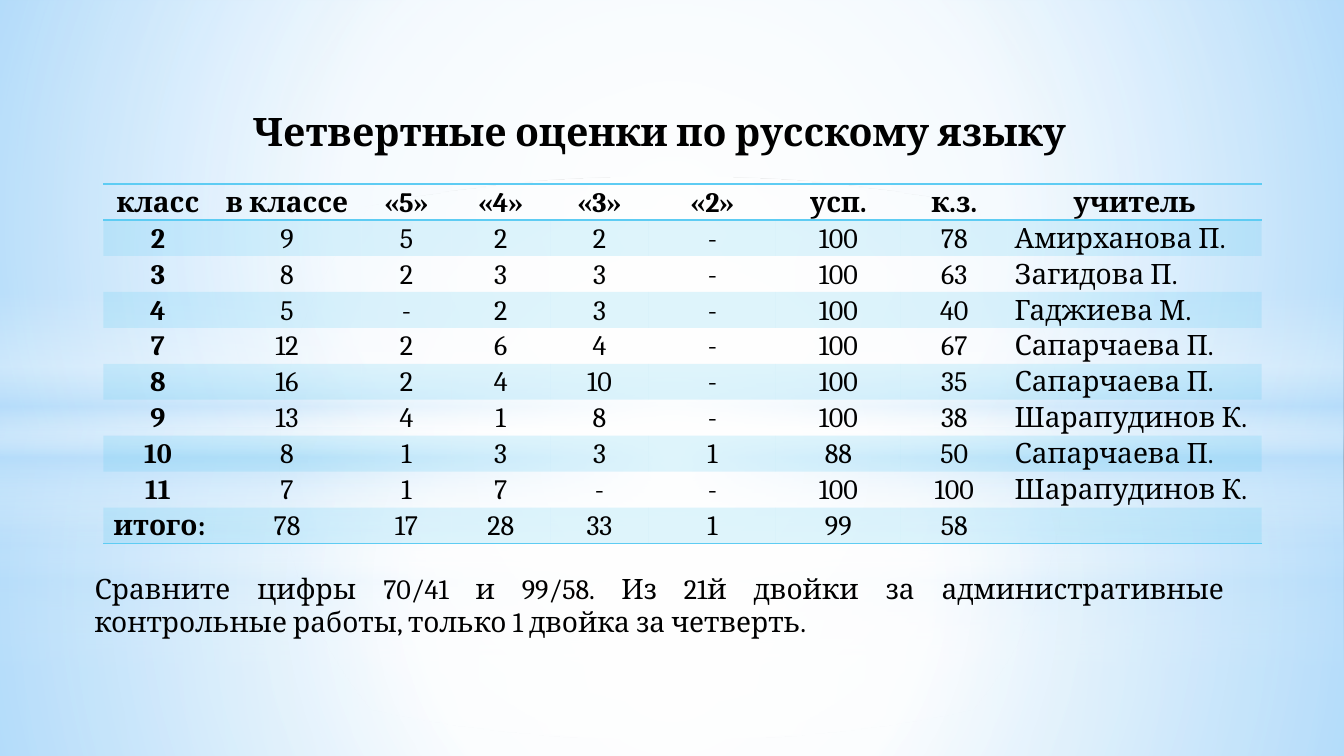
from lxml import etree
from pptx import Presentation
from pptx.dml.color import RGBColor
from pptx.enum import shapes, text
from pptx.oxml import ns
from pptx.util import Pt

SKY = RGBColor(0xB4, 0xDC, 0xFA)
WHITE = RGBColor(0xFF, 0xFF, 0xFF)
BLACK = RGBColor(0, 0, 0)
CYAN = RGBColor(0x5E, 0xCC, 0xF3)
CENTER, JUSTIFY, RIGHT = (text.PP_ALIGN.CENTER, text.PP_ALIGN.JUSTIFY,
                          text.PP_ALIGN.RIGHT)
NO_STYLE = "{2D5ABB26-0587-4C30-8999-92F81FD0307C}"


def write(frame, words, size=20, bold=False, align=CENTER, spacing=None,
          anchor=text.MSO_ANCHOR.MIDDLE):
    frame.word_wrap = True
    frame.vertical_anchor = anchor
    line = frame.paragraphs[0]
    line.alignment = align
    line.line_spacing = spacing
    run = line.add_run()
    run.text = words
    run.font.name = "Cambria"
    run.font.size = Pt(size)
    run.font.bold = bold
    run.font.color.rgb = BLACK


def add_xml(parent, tag, **attributes):
    child = etree.SubElement(parent, ns.qn(tag))
    for name, value in attributes.items():
        child.set(name, str(value))
    return child


deck = Presentation()
deck.slide_width, deck.slide_height = Pt(960), Pt(540)
slide = deck.slides.add_slide(deck.slide_layouts[5])
slide.background.fill.solid()
slide.background.fill.fore_color.rgb = SKY
title = slide.shapes.title

# Background glow: gradient stops are (position, colour, opacity) in percent
RECT, OVAL = shapes.MSO_SHAPE.RECTANGLE, shapes.MSO_SHAPE.OVAL
band = [(0, WHITE, 0), (29, WHITE, 30), (45, SKY, 40), (55, WHITE, 26),
        (65, SKY, 60), (100, WHITE, 0)]
glows = []
for horizon, band_top, extra, halo_end in [(401.8, 296.6, 0, 56),
                                           (304.6, 208.8, 1, 54)]:
    floor = [(0, WHITE, 91 + extra), (37, WHITE, 76 + extra),
             (100, SKY, 79 + extra)]
    sky = [(0, WHITE, 89 + extra), (48, WHITE, 62 + extra),
           (100, SKY, 79 + extra)]
    halo = [(0, WHITE, 100), (halo_end, WHITE, 0), (100, WHITE, 0)]
    glows += [(RECT, horizon, 540 - horizon, floor), (RECT, 0, horizon, sky),
              (RECT, band_top, 180, band), (OVAL, 126, 401.8, halo)]

for outline, top, height, stops in glows:
    glow = slide.shapes.add_shape(outline, 0, Pt(top), Pt(960), Pt(height))
    glow.shadow.inherit = False
    glow.line.fill.background()
    glow.fill.gradient()
    gradient = glow.element.spPr.find(ns.qn("a:gradFill"))
    for part in list(gradient):
        gradient.remove(part)
    stop_list = add_xml(gradient, "a:gsLst")
    for position, colour, opacity in stops:
        stop = add_xml(stop_list, "a:gs", pos=position * 1000)
        tint = add_xml(stop, "a:srgbClr", val=colour)
        add_xml(tint, "a:alpha", val=opacity * 1000)
    if stops is band:
        add_xml(gradient, "a:lin", ang=5400000, scaled=0)
    else:
        focus = add_xml(gradient, "a:path", path="circle")
        add_xml(focus, "a:fillToRect", l=50000, t=50000, r=50000, b=50000)
    title.element.addprevious(glow.element)

# Title
title.left, title.top, title.width, title.height = (
    Pt(167.8), Pt(72.7), Pt(606.2), Pt(41))
write(title.text_frame, "Четвертные оценки по русскому языку", size=28, bold=True)

# Grades table
grades = [
    ["класс", "в классе", "«5»", "«4»", "«3»", "«2»", "усп.", "к.з.", "учитель"],
    ["2", "9", "5", "2", "2", "-", "100", "78", "Амирханова П."],
    ["3", "8", "2", "3", "3", "-", "100", "63", "Загидова П."],
    ["4", "5", "-", "2", "3", "-", "100", "40", "Гаджиева М."],
    ["7", "12", "2", "6", "4", "-", "100", "67", "Сапарчаева П."],
    ["8", "16", "2", "4", "10", "-", "100", "35", "Сапарчаева П."],
    ["9", "13", "4", "1", "8", "-", "100", "38", "Шарапудинов К."],
    ["10", "8", "1", "3", "3", "1", "88", "50", "Сапарчаева П."],
    ["11", "7", "1", "7", "-", "-", "100", "100", "Шарапудинов К."],
    ["итого:", "78", "17", "28", "33", "1", "99", "58", ""],
]
column_widths = [77.8, 106.6, 64.1, 70.6, 70.6, 90.7, 89.3, 76.3, 181.4]
row_height = 25.7
last_row, teacher = len(grades) - 1, len(column_widths) - 1
grades_frame = slide.shapes.add_table(
    len(grades), len(column_widths), Pt(73.9), Pt(131.4),
    Pt(sum(column_widths)), Pt(row_height * len(grades)))
grades_frame.element.find(".//" + ns.qn("a:tableStyleId")).text = NO_STYLE
grades_table = grades_frame.table
for column, width in zip(grades_table.columns, column_widths):
    column.width = Pt(width)

for r, record in enumerate(grades):
    grades_table.rows[r].height = Pt(row_height)
    for c, value in enumerate(record):
        cell = grades_table.cell(r, c)
        cell.margin_left = cell.margin_right = Pt(5)
        cell.margin_top = cell.margin_bottom = 0
        cell.vertical_anchor = text.MSO_ANCHOR.MIDDLE
        align = CENTER
        if r and c == teacher:
            align = JUSTIFY
        elif r == last_row and c == 0:
            align = RIGHT
        if value:
            write(cell.text_frame, value, bold=r == 0 or c == 0, align=align,
                  spacing=1.07)

        # Rules above and below the header and under the totals
        properties = cell._tc.get_or_add_tcPr()
        for side in {0: ["a:lnT", "a:lnB"], last_row: ["a:lnB"]}.get(r, []):
            rule = add_xml(properties, side, w=Pt(1))
            add_xml(add_xml(rule, "a:solidFill"), "a:srgbClr", val=CYAN)

        # Every other row is tinted
        if r % 2:
            cell.fill.solid()
            cell.fill.fore_color.rgb = CYAN
            tint = properties.find(ns.qn("a:solidFill")).find(ns.qn("a:srgbClr"))
            add_xml(tint, "a:alpha", val=20000)
        else:
            cell.fill.background()

# Conclusion
conclusion = slide.shapes.add_textbox(Pt(60.5), Pt(404.6), Pt(820.8), Pt(55.4))
write(conclusion.text_frame,
      "Сравните цифры 70/41 и 99/58. Из 21й двойки за административные "
      "контрольные работы, только 1 двойка за четверть.",
      align=JUSTIFY, anchor=text.MSO_ANCHOR.TOP)

deck.save("out.pptx")
